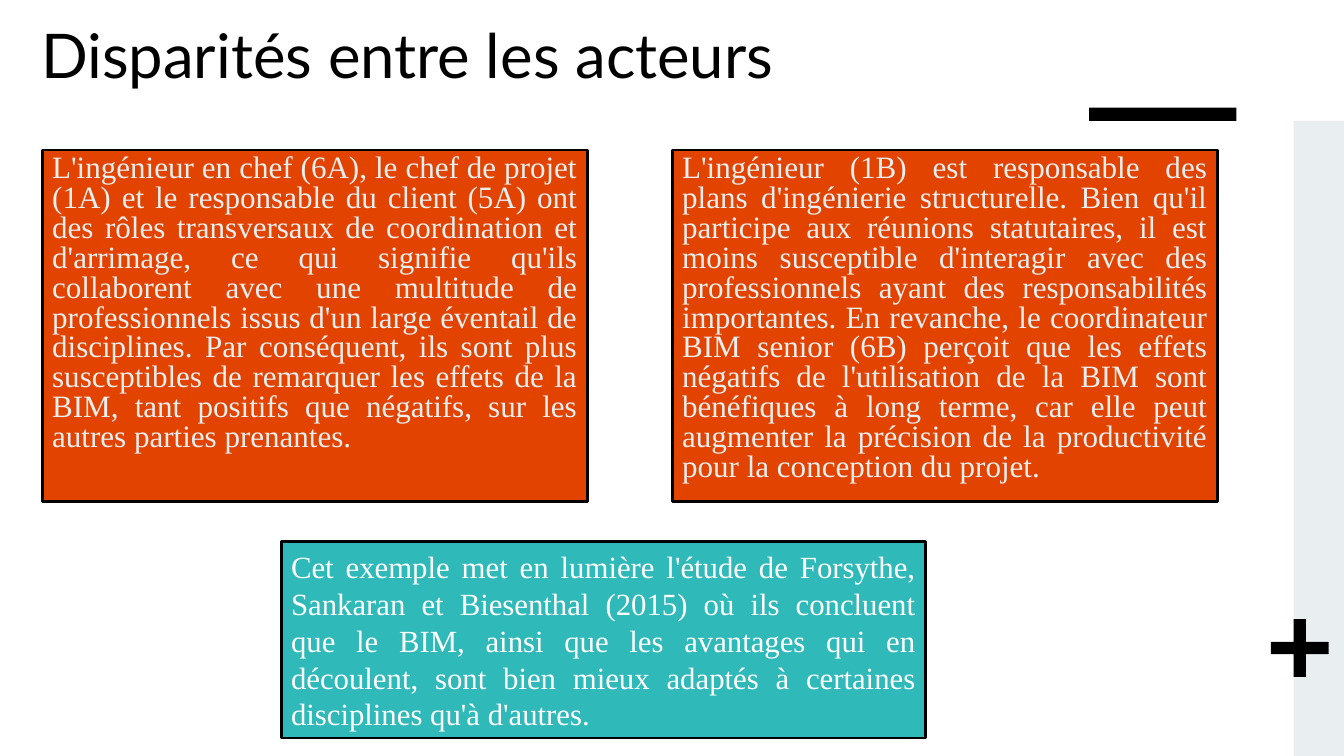
from pptx import Presentation
from pptx.dml.color import RGBColor
from pptx.enum.shapes import MSO_SHAPE as Shape
from pptx.enum.text import MSO_ANCHOR as Anchor, PP_ALIGN as Align
from pptx.util import Pt

# Content
TITLE = "Disparités entre les acteurs"
ACTORS = [
    "L'ingénieur en chef (6A), le chef de projet (1A) et le responsable du client (5A) "
    "ont des rôles transversaux de coordination et d'arrimage, ce qui signifie qu'ils "
    "collaborent avec une multitude de professionnels issus d'un large éventail de "
    "disciplines. Par conséquent, ils sont plus susceptibles de remarquer les effets de "
    "la BIM, tant positifs que négatifs, sur les autres parties prenantes.",
    "L'ingénieur (1B) est responsable des plans d'ingénierie structurelle. Bien qu'il "
    "participe aux réunions statutaires, il est moins susceptible d'interagir avec des "
    "professionnels ayant des responsabilités importantes. En revanche, le coordinateur "
    "BIM senior (6B) perçoit que les effets négatifs de l'utilisation de la BIM sont "
    "bénéfiques à long terme, car elle peut augmenter la précision de la productivité "
    "pour la conception du projet.",
]
CONCLUSION = (
    "Cet exemple met en lumière l'étude de Forsythe, Sankaran et Biesenthal (2015) où ils "
    "concluent que le BIM, ainsi que les avantages qui en découlent, sont bien mieux "
    "adaptés à certaines disciplines qu'à d'autres."
)

# Style
COLORS = {"black": "000000", "white": "FFFFFF", "pale": "E9EFF1",
          "orange": "E24400", "teal": "30B9B9"}
TITLE_FONT, BODY_FONT = "Lato", "Times New Roman"

# Layout in points: left, top, width, height
WIDTH, HEIGHT = 960, 540
BAND_WIDTH, BAND_TOP = 36, 86.4
BAND = (WIDTH - BAND_WIDTH, BAND_TOP, BAND_WIDTH, HEIGHT - BAND_TOP)
BAR = (778, 77, 105.2, 9.4)
PLUS = (907.8, 442.3, 41.2, 41.2)
TITLE_AREA = (22.3, 8.6, 651, 113.8)
ACTOR_LEFT, ACTOR_TOP, ACTOR_WIDTH, ACTOR_HEIGHT = 30.2, 107.2, 389.5, 251.2
ACTOR_STEP = 450
CONCLUSION_AREA = (200.8, 386.8, 460.2, 140.4)

deck = Presentation()
deck.slide_width, deck.slide_height = Pt(WIDTH), Pt(HEIGHT)
page = deck.slides.add_slide(deck.slide_layouts[6])


def color(name):
    return RGBColor.from_string(COLORS[name])


def add_block(kind, area, fill, outlined=False):
    block = page.shapes.add_shape(kind, *map(Pt, area))
    block.shadow.inherit = False
    block.fill.solid()
    block.fill.fore_color.rgb = color(fill)
    if outlined:
        block.line.color.rgb = color("black")
        block.line.width = Pt(2)
    else:
        block.line.fill.background()
    return block


def write(box, text, font, size, ink, align=Align.JUSTIFY, anchor=Anchor.TOP):
    frame = box.text_frame
    frame.word_wrap = True
    frame.vertical_anchor = anchor
    frame.text = text
    para = frame.paragraphs[0]
    para.alignment = align
    span = para.runs[0]
    span.font.name, span.font.size = font, Pt(size)
    span.font.color.rgb = color(ink)
    return para


# Decoration on the right
add_block(Shape.RECTANGLE, BAND, "pale")
add_block(Shape.RECTANGLE, BAR, "black")
plus = add_block(Shape.CROSS, PLUS, "black")
plus.adjustments[0] = 0.395

# Title
title = page.shapes.add_textbox(*map(Pt, TITLE_AREA))
write(title, TITLE, TITLE_FONT, 44, "black", Align.LEFT)

# Two actor boxes side by side
for index, text in enumerate(ACTORS):
    area = (ACTOR_LEFT + index * ACTOR_STEP, ACTOR_TOP, ACTOR_WIDTH, ACTOR_HEIGHT)
    box = add_block(Shape.RECTANGLE, area, "orange", outlined=True)
    para = write(box, text, BODY_FONT, 22.2, "pale")
    para.line_spacing = 0.8
    para.space_before = Pt(10)

# Conclusion
box = add_block(Shape.RECTANGLE, CONCLUSION_AREA, "teal", outlined=True)
write(box, CONCLUSION, BODY_FONT, 22, "white", anchor=Anchor.MIDDLE)

deck.save("out.pptx")
